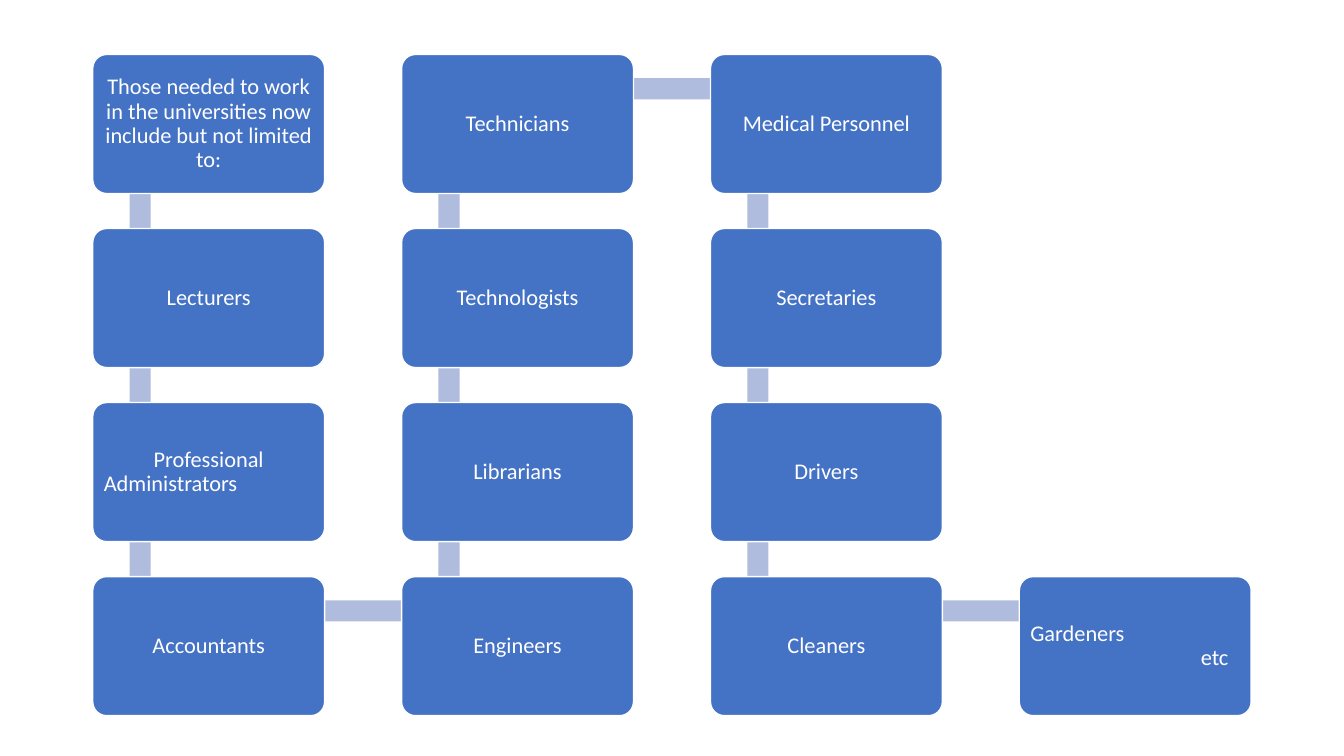
from itertools import pairwise

from pptx import Presentation
from pptx.dml.color import RGBColor
from pptx.enum.shapes import MSO_SHAPE
from pptx.enum.text import MSO_ANCHOR, PP_ALIGN
from pptx.util import Inches, Pt

BOX_BLUE = RGBColor(0x44, 0x72, 0xC4)
LINK_BLUE = RGBColor(0xB0, 0xBC, 0xDE)
WHITE = RGBColor(0xFF, 0xFF, 0xFF)

GRID_SIZE = 4  # rows and columns
BOX_WIDTH, BOX_HEIGHT = 2.3, 1.38
LINK_THICKNESS = 0.21
LINK_X, LINK_Y = 0.47, 0.34  # link centre lines, from a box's corner

CENTER, LEFT = PP_ALIGN.CENTER, PP_ALIGN.LEFT
FRAME_FORMAT = {
    "word_wrap": True,
    "vertical_anchor": MSO_ANCHOR.MIDDLE,
    "margin_left": Inches(0.07),
    "margin_right": Inches(0.07),
    "margin_top": Inches(0.07),
    "margin_bottom": Inches(0.07),
}
FONT_FORMAT = {"name": "Calibri", "size": Pt(16)}

# Each box holds lines of (text, alignment, left indent)
STAFF = [
    [("Those needed to work in the universities now include but not limited to:", CENTER, 0)],
    [("Lecturers", CENTER, 0)],
    [("Professional", CENTER, 0), ("Administrators", LEFT, 0)],
    [("Accountants", CENTER, 0)],
    [("Engineers", CENTER, 0)],
    [("Librarians", CENTER, 0)],
    [("Technologists", CENTER, 0)],
    [("Technicians", CENTER, 0)],
    [("Medical Personnel", CENTER, 0)],
    [("Secretaries", CENTER, 0)],
    [("Drivers", CENTER, 0)],
    [("Cleaners", CENTER, 0)],
    [("Gardeners", LEFT, 0), ("etc", LEFT, 1.69)],
]


def set_format(target, values):
    for name, value in values.items():
        setattr(target, name, value)


def add_block(slide, preset, box, color):
    shape = slide.shapes.add_shape(preset, *(Inches(length) for length in box))
    shape.shadow.inherit = False
    shape.fill.solid()
    shape.fill.fore_color.rgb = color
    return shape


def add_link(slide, start, end):
    """Bar from one box's corner point to the next, hidden behind both."""
    left = min(start[0], end[0]) + LINK_X
    top = min(start[1], end[1]) + LINK_Y
    width, height = abs(end[0] - start[0]), abs(end[1] - start[1])
    if width > height:
        box = (left, top - LINK_THICKNESS / 2, width, LINK_THICKNESS)
    else:
        box = (left - LINK_THICKNESS / 2, top, LINK_THICKNESS, height)
    add_block(slide, MSO_SHAPE.RECTANGLE, box, LINK_BLUE).line.fill.background()


def add_staff_box(slide, corner, lines):
    box = (*corner, BOX_WIDTH, BOX_HEIGHT)
    shape = add_block(slide, MSO_SHAPE.ROUNDED_RECTANGLE, box, BOX_BLUE)
    shape.adjustments[0] = 0.1
    shape.line.color.rgb = WHITE
    shape.line.width = Pt(1)
    frame = shape.text_frame
    set_format(frame, FRAME_FORMAT)
    for index, (text, alignment, indent) in enumerate(lines):
        paragraph = frame.add_paragraph() if index else frame.paragraphs[0]
        set_format(paragraph, {"alignment": alignment, "line_spacing": 0.9})
        if indent:
            paragraph._p.get_or_add_pPr().set("marL", str(Inches(indent)))
        run = paragraph.add_run()
        run.text = text
        set_format(run.font, FONT_FORMAT)
        run.font.color.rgb = WHITE


def add_snake(slide, left, top, width, height):
    """Boxes running down one column and up the next, joined by bars."""
    column_step = (width - BOX_WIDTH) / (GRID_SIZE - 1)
    row_step = (height - BOX_HEIGHT) / (GRID_SIZE - 1)
    corners = []
    for index in range(len(STAFF)):
        column, row = divmod(index, GRID_SIZE)
        if column % 2:
            row = GRID_SIZE - 1 - row
        corners.append((left + column * column_step, top + row * row_step))
    for start, end in pairwise(corners):
        add_link(slide, start, end)
    for corner, lines in zip(corners, STAFF):
        add_staff_box(slide, corner, lines)


def main():
    presentation = Presentation()
    presentation.slide_width = Inches(13.33)
    presentation.slide_height = Inches(7.5)
    slide = presentation.slides.add_slide(presentation.slide_layouts[6])
    add_snake(slide, left=0.92, top=0.54, width=11.49, height=6.56)
    presentation.save("out.pptx")


if __name__ == "__main__":
    main()
